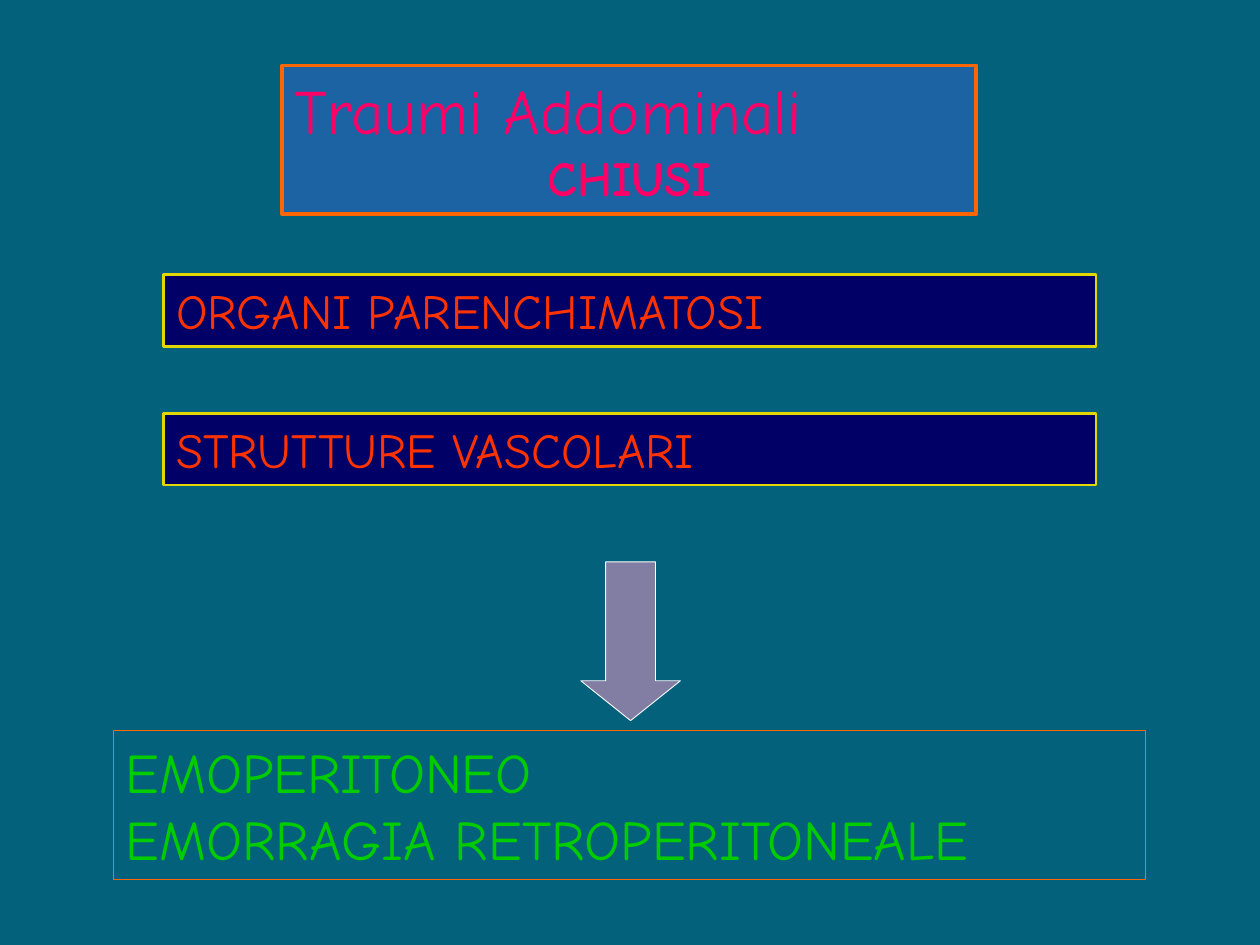
from lxml import etree
from pptx import Presentation
from pptx.dml.color import RGBColor
from pptx.enum.shapes import MSO_SHAPE
from pptx.enum.text import MSO_ANCHOR, MSO_AUTO_SIZE, PP_ALIGN
from pptx.oxml.ns import qn
from pptx.util import Inches, Pt

COLORS = {
    "background": "04617B",
    "title_fill": "3366CC",
    "title_text": "FF0066",
    "orange": "FF6600",
    "navy": "000066",
    "yellow": "E2D700",
    "red": "FF3300",
    "green": "00CC00",
    "pink": "FF99CC",
    "white": "FFFFFF",
}
FONT = "Comic Neue"


def add_block(preset, area, fill, line, line_width, opacity=100):
    shape = page.shapes.add_shape(preset, *[Inches(value) for value in area])
    shape.shadow.inherit = False
    if fill:
        shape.fill.solid()
        shape.fill.fore_color.rgb = RGBColor.from_string(COLORS[fill])
        if opacity < 100:
            color = shape.fill._xPr.find(qn("a:solidFill"))[0]
            etree.SubElement(color, qn("a:alpha"), val=str(opacity * 1000))
    else:
        shape.fill.background()
    shape.line.color.rgb = RGBColor.from_string(COLORS[line])
    shape.line.width = Pt(line_width)
    return shape


def write_lines(box, lines, color):
    frame = box.text_frame
    frame.word_wrap = True
    frame.auto_size = MSO_AUTO_SIZE.SHAPE_TO_FIT_TEXT
    frame.vertical_anchor = MSO_ANCHOR.TOP
    frame.text = "\n".join(text for text, size, bold, align in lines)
    for para, (text, size, bold, align) in zip(frame.paragraphs, lines):
        para.alignment = align
        span = para.runs[0]
        span.font.name = FONT
        span.font.size = Pt(size)
        span.font.bold = bold
        span.font.color.rgb = RGBColor.from_string(COLORS[color])


deck = Presentation()
deck.slide_width = Inches(10)
deck.slide_height = Inches(7.5)
page = deck.slides.add_slide(deck.slide_layouts[6])
page.background.fill.solid()
page.background.fill.fore_color.rgb = RGBColor.from_string(COLORS["background"])

title_box = add_block(
    MSO_SHAPE.RECTANGLE, (2.24, 0.52, 5.51, 1.18), "title_fill", "orange", 2.25, 50
)
title_lines = [
    ("Traumi Addominali", 36, False, PP_ALIGN.LEFT),
    ("CHIUSI", 28, True, PP_ALIGN.CENTER),
]
write_lines(title_box, title_lines, "title_text")

for index, cause in enumerate(["ORGANI PARENCHIMATOSI", "STRUTTURE VASCOLARI"]):
    cause_box = add_block(
        MSO_SHAPE.RECTANGLE, (1.3, 2.18 + 1.1 * index, 7.4, 0.57), "navy", "yellow", 1.5
    )
    write_lines(cause_box, [(cause, 28, False, PP_ALIGN.LEFT)], "red")

result_box = add_block(
    MSO_SHAPE.RECTANGLE, (0.9, 5.8, 8.19, 1.18), None, "orange", 0.75
)
results = ["EMOPERITONEO", "EMORRAGIA RETROPERITONEALE"]
write_lines(
    result_box, [(result, 32, False, PP_ALIGN.LEFT) for result in results], "green"
)

arrow = add_block(
    MSO_SHAPE.DOWN_ARROW, (4.61, 4.46, 0.79, 1.26), "pink", "white", 0.5, 50
)
arrow.adjustments[0] = 0.5
arrow.adjustments[1] = 0.4

deck.save("out.pptx")
